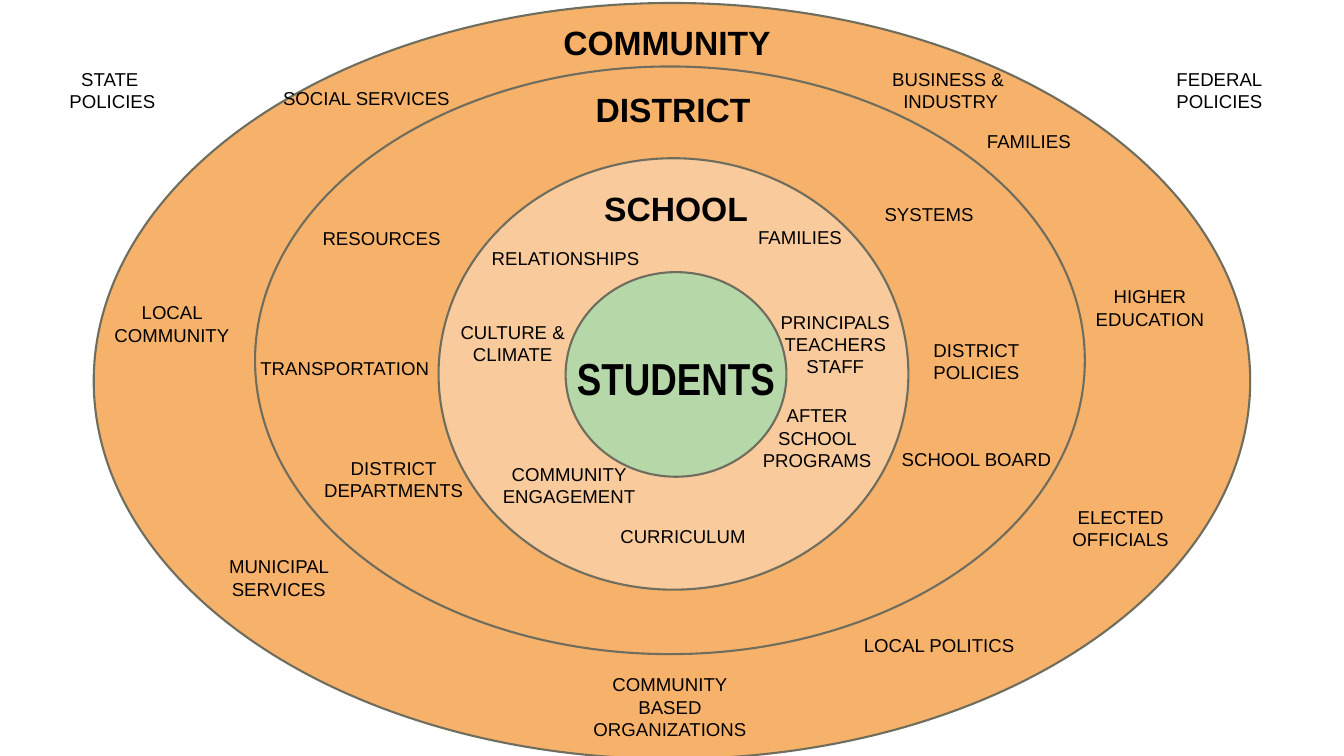
import pptx
import pptx.util
import pptx.dml.color
import pptx.enum.shapes
import pptx.enum.text

Inches = pptx.util.Inches
RGBColor = pptx.dml.color.RGBColor

ORANGE = RGBColor(0xF6, 0xB2, 0x6B)
PEACH = RGBColor(0xF9, 0xCB, 0x9C)
GREEN = RGBColor(0xB6, 0xD7, 0xA8)
OUTLINE = RGBColor(0x6F, 0x6D, 0x5D)
BLACK = RGBColor(0, 0, 0)

LABEL_WIDTH, LABEL_HEIGHT = 2.01, 0.87

STUDENT_FACTORS = [
    (5.91, 5.1, 1.73, 0.45, "CURRICULUM"),
    (4.71, 4.46, 1.87, 0.84, "COMMUNITY\nENGAGEMENT"),
    (4.65, 2.34, 1.92, 0.45, "RELATIONSHIPS"),
    (7.35, 3.88, 1.51, 0.45, "AFTER SCHOOL PROGRAMS"),
    (4.33, 3.05, 1.51, 0.73, "CULTURE & CLIMATE"),
    (7.21, 0.54, 4.44, 0.56, "BUSINESS & \nINDUSTRY"),
    (2.38, 3.43, 2.08, LABEL_HEIGHT, "TRANSPORTATION"),
]

STANDARD_FACTORS = [
    (5.64, 6.55, "COMMUNITY\nBASED\nORGANIZATIONS"),
    (0.7, 2.86, "LOCAL COMMUNITY"),
    (10.4, 2.7, "HIGHER EDUCATION"),
    (8.31, 6.18, "LOCAL POLITICS"),
    (2.63, 0.75, "SOCIAL SERVICES"),
    (9.2, 1.18, "FAMILIES"),
    (1.76, 5.38, "MUNICIPAL SERVICES"),
    (6.93, 2.13, "FAMILIES"),
    (8.68, 3.23, "DISTRICT\nPOLICIES"),
    (8.68, 4.33, "SCHOOL BOARD"),
    (7.28, 2.95, "PRINCIPALS\nTEACHERS\nSTAFF"),
    (2.78, 2.14, "RESOURCES"),
    (8.21, 1.9, "SYSTEMS"),
    (11.09, 0.54, "FEDERAL\nPOLICIES"),
    (0.11, 0.54, "STATE \nPOLICIES"),
    (2.9, 4.4, "DISTRICT\nDEPARTMENTS"),
    (10.11, 4.89, "ELECTED OFFICIALS"),
]

RING_TITLES = [
    (5.67, 0.75, LABEL_WIDTH, LABEL_HEIGHT, "DISTRICT"),
    (5.7, 1.73, LABEL_WIDTH, LABEL_HEIGHT, "SCHOOL"),
    (5.26, 0.09, 2.71, 0.68, "COMMUNITY"),
]


def add_ring(page, left, top, width, height, color=None):
    ring = page.shapes.add_shape(
        pptx.enum.shapes.MSO_SHAPE.OVAL,
        Inches(left), Inches(top), Inches(width), Inches(height))
    ring.shadow.inherit = False
    if color is None:
        ring.fill.background()
    else:
        ring.fill.solid()
        ring.fill.fore_color.rgb = color
    ring.line.color.rgb = OUTLINE
    ring.line.width = pptx.util.Pt(1.5)


def add_label(page, left, top, width, height, text, size=13.3, bold=False,
              font="Arial", anchor=pptx.enum.text.MSO_ANCHOR.TOP):
    box = page.shapes.add_textbox(
        Inches(left), Inches(top), Inches(width), Inches(height))
    frame = box.text_frame
    frame.word_wrap = True
    frame.vertical_anchor = anchor
    frame.margin_left = frame.margin_right = Inches(0.13)
    frame.margin_top = frame.margin_bottom = Inches(0.13)
    for index, line in enumerate(text.split("\n")):
        para = frame.add_paragraph() if index else frame.paragraphs[0]
        para.alignment = pptx.enum.text.PP_ALIGN.CENTER
        span = para.add_run()
        span.text = line
        span.font.name = font
        span.font.size = pptx.util.Pt(size)
        span.font.bold = bold
        span.font.color.rgb = BLACK


def main():
    deck = pptx.Presentation()
    deck.slide_width = Inches(13.33)
    deck.slide_height = Inches(7.5)
    page = deck.slides.add_slide(deck.slide_layouts[6])

    add_ring(page, 0.93, 0.03, 11.47, 7.5, ORANGE)
    add_ring(page, 4.35, 1.57, 4.66, 4.28, PEACH)
    add_ring(page, 5.61, 2.7, 2.19, 2.03, GREEN)

    add_label(page, 5.55, 3.22, 2.31, 1.05, "STUDENTS", 32, True,
              "Arial Narrow", pptx.enum.text.MSO_ANCHOR.MIDDLE)
    for factor in STUDENT_FACTORS:
        add_label(page, *factor)
    for left, top, text in STANDARD_FACTORS:
        add_label(page, left, top, LABEL_WIDTH, LABEL_HEIGHT, text)
    for title in RING_TITLES:
        add_label(page, *title, size=24, bold=True)

    add_ring(page, 2.53, 0.66, 8.23, 5.83)
    deck.save("out.pptx")


if __name__ == "__main__":
    main()
